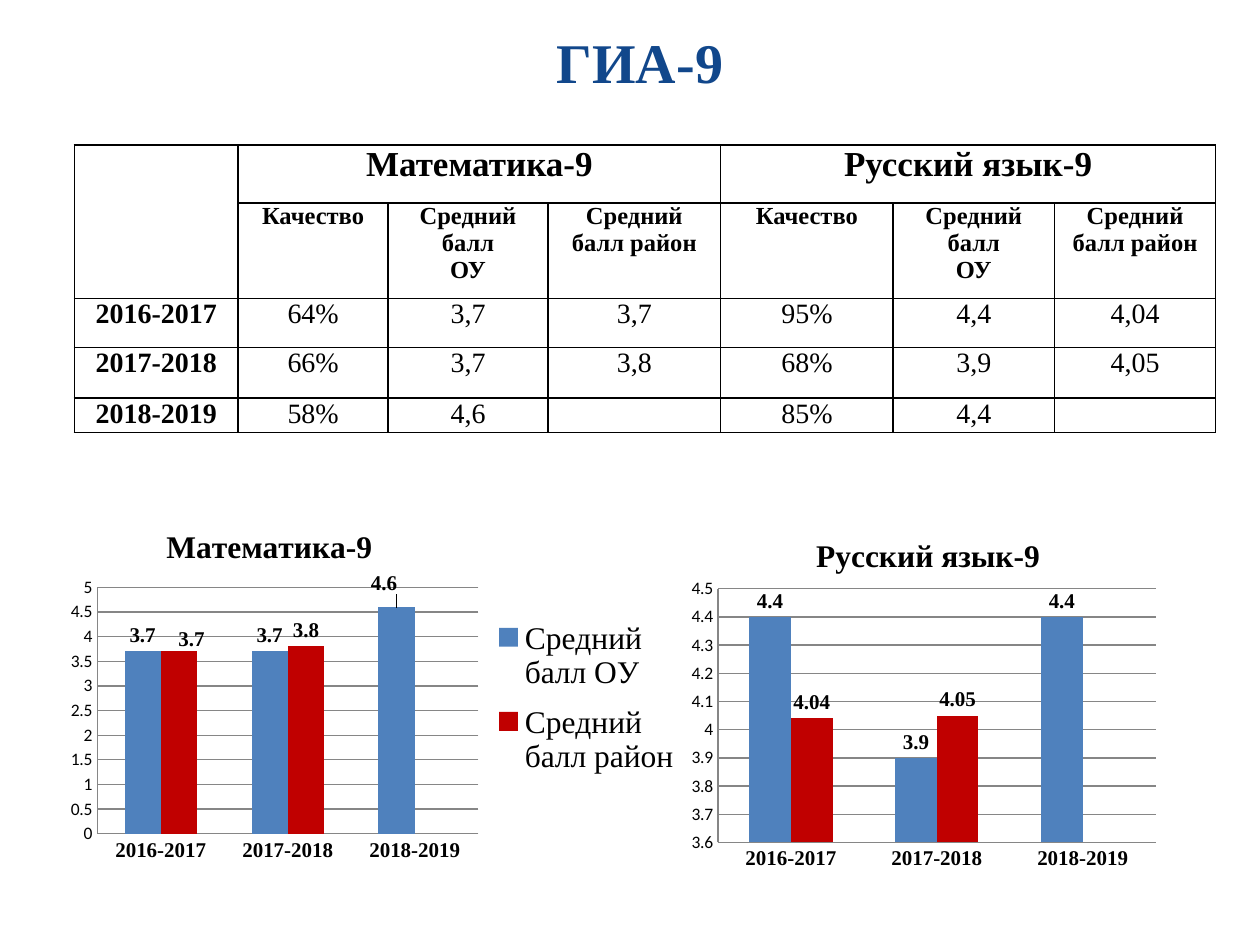
from dataclasses import dataclass
from typing import Optional

from lxml import etree
from pptx import Presentation
from pptx.chart import data as chart_data
from pptx.dml import color
from pptx.enum import chart as ch, text
from pptx.oxml import ns
from pptx.util import Inches, Pt

Box = tuple[float, float, float, float]


@dataclass(frozen=True)
class Theme:
    serif: str = "Times New Roman"
    sans: str = "Calibri"
    ink: str = "000000"
    heading: str = "11478B"
    school: str = "4F81BD"
    district: str = "C00000"
    axis: str = "868686"
    heading_size: int = 32
    subject_size: int = 20
    column_size: int = 14
    score_size: int = 16
    chart_size: int = 18
    label_size: int = 12
    scale_size: int = 10


@dataclass(frozen=True)
class LabelShift:
    series: int
    point: int
    dx: float
    dy: float


@dataclass(frozen=True)
class Subject:
    name: str
    box: Box
    school: tuple
    district: tuple
    scale: tuple[float, float, float]
    plot: Box
    title_at: tuple[float, float]
    legend: Optional[Box] = None
    shifts: tuple[LabelShift, ...] = ()


THEME = Theme()
YEARS = ("2016-2017", "2017-2018", "2018-2019")
MEASURES = ("Качество", "Средний балл\nОУ", "Средний балл район")
SCORES = (
    ("64%", "3,7", "3,7", "95%", "4,4", "4,04"),
    ("66%", "3,7", "3,8", "68%", "3,9", "4,05"),
    ("58%", "4,6", "", "85%", "4,4", ""),
)
SUBJECTS = (
    Subject("Математика-9", (0.47, 3.99, 5.04, 2.92), (3.7, 3.7, 4.6), (3.7, 3.8, None),
            (0, 5, 0.5), (0.06, 0.23, 0.6, 0.67), (0.16, 0.05), (0.67, 0.28, 0.32, 0.5),
            (LabelShift(0, 2, -0.02, -0.02), LabelShift(1, 0, 0.02, 0.01))),
    Subject("Русский язык-9", (5.39, 4.06, 3.86, 2.92), (4.4, 3.9, 4.4), (4.04, 4.05, None),
            (3.6, 4.5, 0.1), (0.08, 0.21, 0.9, 0.69), (0.27, 0.05)),
)
COLUMN_WIDTHS = (1.3, 1.19, 1.27, 1.37, 1.37, 1.28, 1.28)
ROW_HEIGHTS = (0.46, 0.76, 0.39, 0.4, 0.27)


def rgb(value: str) -> color.RGBColor:
    return color.RGBColor.from_string(value)


def style(font, size: int, bold: bool = False, family: str = THEME.serif, ink: str = THEME.ink) -> None:
    font.size, font.bold, font.name = Pt(size), bold, family
    font.color.rgb = rgb(ink)


def write(frame, content: str, size: int, bold: bool, ink: str = THEME.ink) -> None:
    for index, line in enumerate(content.split("\n")):
        paragraph = frame.add_paragraph() if index else frame.paragraphs[0]
        paragraph.alignment = text.PP_ALIGN.CENTER
        if line:
            run = paragraph.add_run()
            run.text = line
            style(run.font, size, bold, ink=ink)
        else:
            etree.SubElement(paragraph._p, ns.qn("a:endParaRPr"), sz=str(size * 100))


def outline(cell) -> None:
    properties = cell._tc.get_or_add_tcPr()
    for side in ("a:lnL", "a:lnR", "a:lnT", "a:lnB"):
        line = etree.SubElement(properties, ns.qn(side), w=str(Pt(1)))
        fill = etree.SubElement(line, ns.qn("a:solidFill"))
        etree.SubElement(fill, ns.qn("a:srgbClr"), val=THEME.ink)


def add_heading(slide, content: str) -> None:
    heading = slide.shapes.add_textbox(Inches(1.3), Inches(0.13), Inches(7.56), Inches(0.71))
    heading.text_frame.word_wrap = True
    heading.text_frame.vertical_anchor = text.MSO_ANCHOR.MIDDLE
    write(heading.text_frame, content, THEME.heading_size, True, THEME.heading)


def add_results(slide) -> None:
    table = slide.shapes.add_table(
        len(ROW_HEIGHTS), len(COLUMN_WIDTHS), Inches(0.59), Inches(1.15),
        Inches(sum(COLUMN_WIDTHS)), Inches(sum(ROW_HEIGHTS))).table
    table.first_row = table.horz_banding = False
    for column, width in zip(table.columns, COLUMN_WIDTHS):
        column.width = Inches(width)
    for row, height in zip(table.rows, ROW_HEIGHTS):
        row.height = Inches(height)

    names = [subject.name for subject in SUBJECTS]
    rows = [("", names[0], "", "", names[1], "", ""), ("", *MEASURES, *MEASURES)]
    rows += [(year, *scores) for year, scores in zip(YEARS, SCORES)]
    sizes = (THEME.subject_size, THEME.column_size) + (THEME.score_size,) * len(YEARS)
    for r, (contents, size) in enumerate(zip(rows, sizes)):
        for c, content in enumerate(contents):
            cell = table.cell(r, c)
            cell.margin_left = cell.margin_right = Inches(0.07)
            cell.margin_top = cell.margin_bottom = 0
            outline(cell)
            cell.fill.background()
            write(cell.text_frame, content, size, r < 2 or c == 0)

    table.cell(0, 0).merge(table.cell(1, 0))
    for first in (1, 4):
        table.cell(0, first).merge(table.cell(0, first + 2))


def place(parent, position: int, values: tuple, inner: bool = False, absolute: bool = True) -> None:
    for old in parent.findall(ns.qn("c:layout")):
        parent.remove(old)
    layout = etree.Element(ns.qn("c:layout"))
    manual = etree.SubElement(layout, ns.qn("c:manualLayout"))
    if inner:
        etree.SubElement(manual, ns.qn("c:layoutTarget"), val="inner")
    if absolute:
        for mode in ("c:xMode", "c:yMode"):
            etree.SubElement(manual, ns.qn(mode), val="edge")
    for key, value in zip("xywh", values):
        etree.SubElement(manual, ns.qn(f"c:{key}"), val=str(value))
    parent.insert(position, layout)


def format_axes(chart, scale: tuple[float, float, float]) -> None:
    years, values = chart.category_axis, chart.value_axis
    for axis in (years, values):
        axis.major_tick_mark = axis.minor_tick_mark = ch.XL_TICK_MARK.NONE
        axis.format.line.color.rgb = rgb(THEME.axis)
        axis.format.line.width = Pt(0.75)
    style(years.tick_labels.font, THEME.label_size, True)
    style(values.tick_labels.font, THEME.scale_size, family=THEME.sans)
    values.minimum_scale, values.maximum_scale, values.major_unit = scale
    values.major_gridlines.format.line.color.rgb = rgb(THEME.axis)
    values.major_gridlines.format.line.width = Pt(0.75)


def add_subject_chart(slide, subject: Subject) -> None:
    marks = chart_data.CategoryChartData()
    marks.categories = YEARS
    marks.add_series("Средний балл ОУ", subject.school)
    marks.add_series("Средний балл район", subject.district)
    chart = slide.shapes.add_chart(
        ch.XL_CHART_TYPE.COLUMN_CLUSTERED, *map(Inches, subject.box), marks).chart
    style(chart.font, THEME.scale_size, family=THEME.sans)

    title = chart.chart_title
    write(title.text_frame, subject.name, THEME.chart_size, True)
    title.include_in_layout = False
    place(title._element, 1, subject.title_at)
    format_axes(chart, subject.scale)

    plot = chart.plots[0]
    plot.vary_by_categories = False
    plot.gap_width, plot.overlap = 150, 0
    for series, fill in zip(plot.series, (THEME.school, THEME.district)):
        series.format.fill.solid()
        series.format.fill.fore_color.rgb = rgb(fill)
        labels = series.data_labels
        labels.show_value = True
        labels.position = ch.XL_LABEL_POSITION.OUTSIDE_END
        style(labels.font, THEME.label_size, True)
    for shift in subject.shifts:
        series = plot.series[shift.series]
        label = series.points[shift.point].data_label
        style(label.font, THEME.label_size, True)
        label.position = ch.XL_LABEL_POSITION.OUTSIDE_END
        place(series.data_labels._element.find(ns.qn("c:dLbl")), 1, (shift.dx, shift.dy), absolute=False)

    place(chart._chartSpace.chart.plotArea, 0, subject.plot, inner=True)
    chart.has_legend = subject.legend is not None
    if subject.legend:
        chart.legend.position = ch.XL_LEGEND_POSITION.RIGHT
        chart.legend.include_in_layout = False
        style(chart.legend.font, THEME.chart_size)
        place(chart.legend._element, 1, subject.legend)


def main() -> None:
    deck = Presentation()
    deck.slide_width, deck.slide_height = Inches(10), Inches(7.5)
    slide = deck.slides.add_slide(deck.slide_layouts[6])
    add_results(slide)
    add_heading(slide, "ГИА-9")
    for subject in SUBJECTS:
        add_subject_chart(slide, subject)
    deck.save("out.pptx")


if __name__ == "__main__":
    main()
